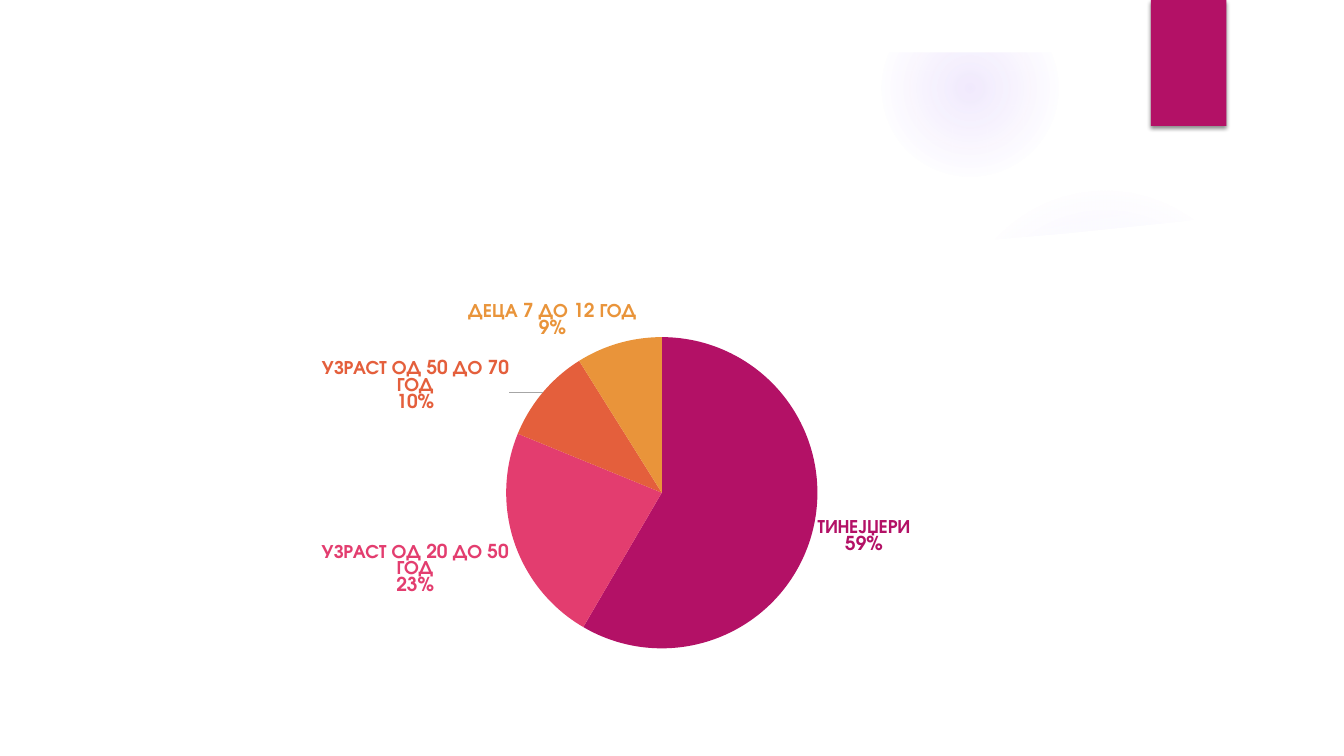
from pptx import Presentation
from pptx.chart.data import CategoryChartData
from pptx.dml.color import RGBColor
from pptx.enum.chart import XL_CHART_TYPE, XL_LABEL_POSITION
from pptx.enum.shapes import MSO_SHAPE
from pptx.oxml import parse_xml
from pptx.oxml.ns import nsdecls, qn
from pptx.util import Inches, Pt

OVAL, RECT = MSO_SHAPE.OVAL, MSO_SHAPE.RECTANGLE
PIE, OUTER = XL_CHART_TYPE.PIE, XL_LABEL_POSITION.OUTSIDE_END
COLS, ROWS = 160, 90
COLORS = {"white": "FFFFFF", "black": "000000", "gray": "A6A6A6", "glow": "9B6BF2",
          "plum": "B31166", "pink": "E33D6F", "rust": "E45F3C", "gold": "E9943A"}
FONT = {"name": "TeX Gyre Adventor", "size": Pt(13.7), "bold": True}
AGES = [("ТИНЕЈЏЕРИ", 59, "plum"), ("УЗРАСТ ОД 20 ДО 50 ГОД", 23, "pink"),
        ("УЗРАСТ ОД 50 ДО 70 ГОД", 10, "rust"), ("ДЕЦА 7 ДО 12 ГОД", 9, "gold")]
MOVED = {0: {"x": 0, "y": -0.04}, 2: {"x": -0.03, "y": 0.06}, 3: {"x": 0.02, "y": 0}}
PLOT = {"layoutTarget": "inner", "xMode": "edge", "yMode": "edge",
        "x": 0.39, "y": 0.13, "w": 0.32, "h": 0.83}

STRIP = [(111.6, 29.2), (122.4, 27.6), (133.1, 25.7), (144.2, 22.9),
         (154, 19.9), (154.7, 25.7), (132, 28.6), (112, 30)]
PANEL = [(6, 84), (6, 24.5), (22, 26.6), (43, 28.3), (64, 29.4), (82, 29.8),
         (101, 29.5), (114, 28.9), (127, 27.8), (140.5, 26.4), (154, 24.5), (154, 84)]
EDGE = [(0, 0), (0, ROWS), (COLS, ROWS), (COLS, 0)]
HOLE = [(153.75, 83.75), (6.25, 83.75), (6.25, 6.25), (153.75, 6.25)]


def rgb(name):
    return RGBColor.from_string(COLORS[name])


def layout(parts):
    """Build a manual chart layout from its parts."""
    items = "".join(f'<c:{key} val="{val}"/>' for key, val in parts.items())
    return parse_xml(f'<c:layout {nsdecls("c")}><c:manualLayout>{items}'
                     '</c:manualLayout></c:layout>')


class Deck:
    def __init__(self):
        self.prs = Presentation()
        self.prs.slide_width, self.prs.slide_height = Inches(13.333), Inches(7.5)
        self.shapes = self.prs.slides.add_slide(self.prs.slide_layouts[6]).shapes

    def spot(self, col, row):
        return (round(col * self.prs.slide_width / COLS),
                round(row * self.prs.slide_height / ROWS))

    def paint(self, shape, color):
        shape.shadow.inherit = False
        shape.fill.solid()
        shape.fill.fore_color.rgb = rgb(color)
        shape.line.fill.background()
        return shape

    def glow(self, col, row, size, stops):
        """Add a round glow; stops are (place, opacity) in percent."""
        shape = self.paint(self.shapes.add_shape(
            OVAL, *self.spot(col, row), *self.spot(size, size)), "glow")
        items = "".join(
            f'<a:gs pos="{at * 1000}"><a:srgbClr val="{COLORS["glow"]}">'
            f'<a:alpha val="{alpha * 1000}"/></a:srgbClr></a:gs>' for at, alpha in stops)
        props = shape.element.spPr
        props.replace(props.find(qn("a:solidFill")), parse_xml(
            f'<a:gradFill {nsdecls("a")}><a:gsLst>{items}</a:gsLst><a:path path="circle">'
            '<a:fillToRect l="50000" t="50000" r="50000" b="50000"/></a:path></a:gradFill>'))

    def outline(self, *loops, alpha=100):
        """Add a white area bounded by one or more closed loops."""
        build = self.shapes.build_freeform(*self.spot(*loops[0][0]))
        for num, loop in enumerate(loops):
            if num:
                build.move_to(*self.spot(*loop[0]))
            build.add_line_segments([self.spot(*pt) for pt in loop[1:]], close=True)
        shape = self.paint(build.convert_to_shape(), "white")
        if alpha < 100:
            shape.element.spPr.find(".//" + qn("a:srgbClr")).append(
                parse_xml(f'<a:alpha {nsdecls("a")} val="{alpha * 1000}"/>'))

    def tab(self, col, row, wide, high):
        shape = self.paint(self.shapes.add_shape(
            RECT, *self.spot(col, row), *self.spot(wide, high)), "plum")
        shape.element.spPr.find(qn("a:effectLst")).append(parse_xml(
            f'<a:outerShdw {nsdecls("a")} blurRad="{Pt(3)}" dist="{Pt(2)}" dir="5400000" '
            f'rotWithShape="0"><a:srgbClr val="{COLORS["black"]}">'
            '<a:alpha val="45000"/></a:srgbClr></a:outerShdw>'))

    def style(self, font, color):
        for key, val in FONT.items():
            setattr(font, key, val)
        font.color.rgb = rgb(color)

    def pie(self, col, row, wide, high):
        data = CategoryChartData()
        data.categories = [name for name, _, _ in AGES]
        data.add_series("Series 1", [val for _, val, _ in AGES])
        chart = self.shapes.add_chart(
            PIE, *self.spot(col, row), *self.spot(wide, high), data).chart
        chart.has_legend = chart.has_title = False
        self.style(chart.font, "black")
        area = chart.plots[0]
        area.vary_by_categories = True
        series = area.series[0]
        for num, (_, _, color) in enumerate(AGES):
            point = series.points[num]
            point.format.fill.solid()
            point.format.fill.fore_color.rgb = rgb(color)
            point.format.line.fill.background()
            self.style(point.data_label.font, color)
            point.data_label.position = OUTER
        labels = series.data_labels._element
        for num, label in enumerate(labels.findall(qn("c:dLbl"))):
            label.find(qn("c:showCatName")).set("val", "1")
            label.insert(1, parse_xml(f'<c:numFmt {nsdecls("c")} formatCode="0&quot;%&quot;" '
                                      'sourceLinked="0"/>'))
            if num in MOVED:
                label.insert(1, layout(MOVED[num]))
            label.append(parse_xml(f'<c:separator {nsdecls("c")}>\n</c:separator>'))
        labels.find(qn("c:showLeaderLines")).addnext(parse_xml(
            f'<c:leaderLines {nsdecls("c", "a")}><c:spPr><a:ln w="{Pt(0.75)}"><a:solidFill>'
            f'<a:srgbClr val="{COLORS["gray"]}"/></a:solidFill></a:ln></c:spPr>'
            '</c:leaderLines>'))
        plot = chart._chartSpace.chart.plotArea
        old = plot.find(qn("c:layout"))
        if old is not None:
            plot.remove(old)
        plot.insert(0, layout(PLOT))


def main():
    deck = Deck()
    deck.glow(113, 22, 37, [(0, 7), (36, 6), (69, 0)])
    deck.glow(105, 0, 21, [(0, 14), (36, 7), (73, 0)])
    deck.outline(STRIP, alpha=20)
    deck.outline(PANEL)
    deck.outline(EDGE, HOLE)
    deck.tab(137, 0, 9, 15)
    deck.pie(15.1, 34.2, 115.8, 44.9)
    deck.prs.save("out.pptx")


if __name__ == "__main__":
    main()
